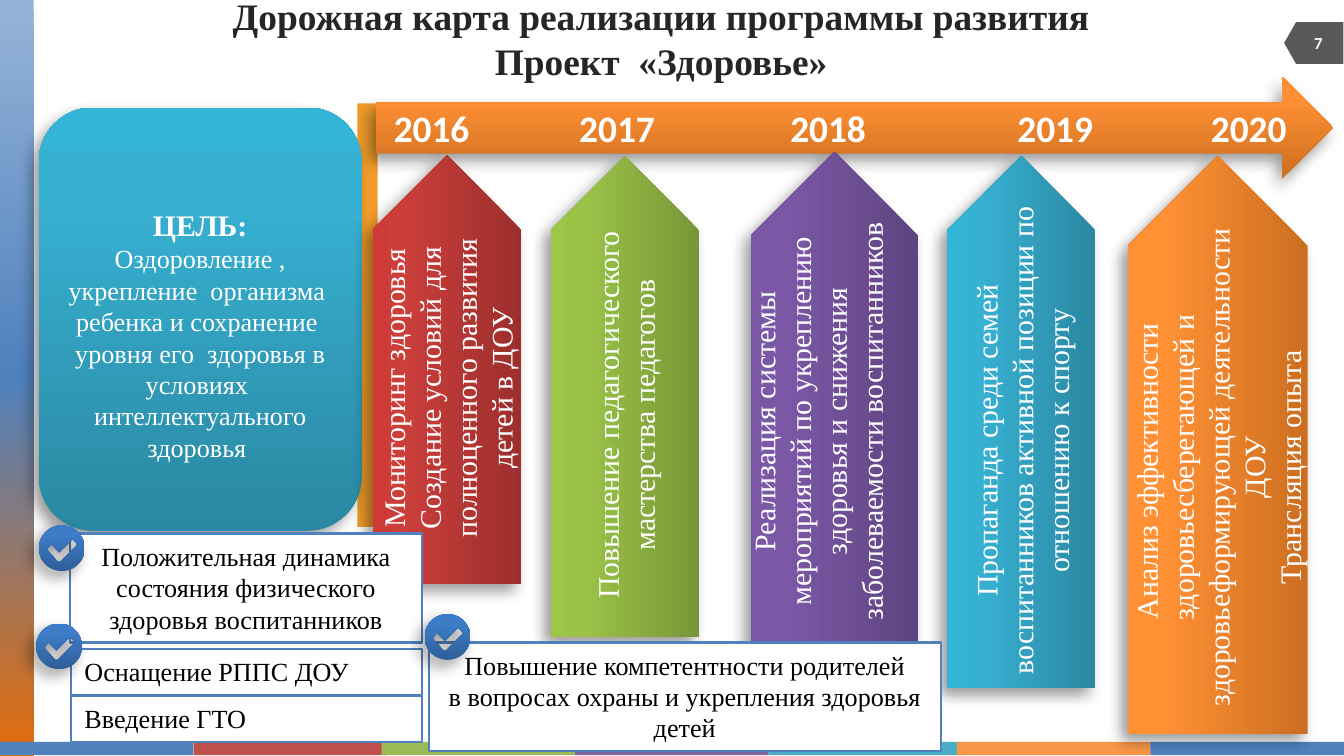
"""Builds the road map slide of the «Здоровье» project."""
import math

from lxml import etree
from pptx import Presentation
from pptx.dml.color import RGBColor
from pptx.enum.shapes import MSO_SHAPE
from pptx.enum.text import MSO_ANCHOR, MSO_AUTO_SIZE, PP_ALIGN
from pptx.oxml.ns import qn
from pptx.util import Inches, Pt

RECTANGLE = MSO_SHAPE.RECTANGLE
ROUNDED = MSO_SHAPE.ROUNDED_RECTANGLE
RIGHT_ARROW = MSO_SHAPE.RIGHT_ARROW
HOME_PLATE = MSO_SHAPE.PENTAGON
PAGE_MARKER = MSO_SHAPE.FLOWCHART_OFFPAGE_CONNECTOR
TOP, MIDDLE = MSO_ANCHOR.TOP, MSO_ANCHOR.MIDDLE
LEFT, CENTER = PP_ALIGN.LEFT, PP_ALIGN.CENTER
GROW, FIXED = MSO_AUTO_SIZE.SHAPE_TO_FIT_TEXT, MSO_AUTO_SIZE.NONE
SERIF, SANS = "Times New Roman", "Calibri"

COLORS = {
    "white": "FFFFFF", "black": "000000", "title": "262626", "marker": "595959",
    "stripe": "F09C2A", "blue": "4F81BD", "red": "C0504D", "green": "9BBB59",
    "purple": "8064A2", "aqua": "4BACC6", "orange": "F79646",
}
GRADIENTS = {
    "side": [(0, "95B3D7"), (50, "4F81BD"), (100, "E46C0A")],
    "orange": [(0, "CC6E20"), (80, "FF9034"), (100, "FF9136")],
    "aqua": [(0, "2A88A2"), (80, "37B1D2"), (100, "34B4D6")],
    "red": [(0, "9C2F2D"), (80, "CB3E3A"), (100, "CE3B37")],
    "green": [(0, "779737"), (80, "9BC348"), (100, "9DC746")],
    "purple": [(0, "5F4480"), (80, "7B58A6"), (100, "7C57A8")],
    "badge": [(0, "2F5F99"), (80, "3D7CC7"), (100, "3A7CCB")],
}


def paint(shape, color=None, gradient=None, angle=90, shadow=True):
    shape.line.fill.background()
    shape.shadow.inherit = False
    if color:
        shape.fill.solid()
        shape.fill.fore_color.rgb = RGBColor.from_string(COLORS[color])
        return
    shape.fill.gradient()
    shape.fill.gradient_angle = angle
    properties = shape.element.spPr
    stops = properties.find(".//" + qn("a:gsLst"))
    for stop in list(stops):
        stops.remove(stop)
    for position, value in GRADIENTS[gradient]:
        stop = etree.SubElement(stops, qn("a:gs"), pos=str(position * 1000))
        etree.SubElement(stop, qn("a:srgbClr"), val=value)
    if shadow:
        effects = properties.find(qn("a:effectLst"))
        outer = etree.SubElement(effects, qn("a:outerShdw"), blurRad=str(Pt(8)),
                                 dist=str(Pt(5)), dir="8100000", rotWithShape="0")
        black = etree.SubElement(outer, qn("a:srgbClr"), val=COLORS["black"])
        etree.SubElement(black, qn("a:alpha"), val="40000")


def write(shape, lines, size, color="white", font=SERIF, bold=False,
          align=CENTER, anchor=MIDDLE):
    frame = shape.text_frame
    frame.word_wrap = True
    frame.vertical_anchor = anchor
    for index, line in enumerate(lines):
        paragraph = frame.add_paragraph() if index else frame.paragraphs[0]
        paragraph.alignment = align
        for part_index, part in enumerate(line.split("\n")):
            if part_index:
                paragraph.add_line_break()
            run = paragraph.add_run()
            run.text = part
            run.font.size = Pt(size)
            run.font.name = font
            run.font.bold = bold
            run.font.color.rgb = RGBColor.from_string(COLORS[color])
    return frame


presentation = Presentation()
presentation.slide_width = Inches(10)
presentation.slide_height = Inches(45 / 8)
slide = presentation.slides.add_slide(presentation.slide_layouts[5])
shapes = slide.shapes

title = shapes.title
title.left, title.top, title.width, title.height = map(Inches, (0.62, 0, 8.6, 0.57))
frame = write(title, ["Дорожная карта реализации программы развития\nПроект  «Здоровье»"],
              20, "title", bold=True)
frame.word_wrap = False
frame.auto_size = FIXED
frame.margin_left = frame.margin_right = frame.margin_top = frame.margin_bottom = 0

side_bar = shapes.add_shape(RECTANGLE, 0, 0, Inches(0.25), presentation.slide_height)
paint(side_bar, gradient="side", angle=270, shadow=False)

footer = [(0, "blue"), (1.44, "red"), (2.84, "green"), (4.28, "purple"),
          (5.72, "aqua"), (7.12, "orange"), (8.56, "blue")]
for left, color in footer:
    band = shapes.add_shape(RECTANGLE, Inches(left), Inches(5.52), Inches(1.44), Inches(0.1))
    paint(band, color)

marker = shapes.add_shape(PAGE_MARKER, Inches(9.62), Inches(0.1), Inches(0.31), Inches(0.44))
marker.rotation = 90
paint(marker, "marker")
stripe = shapes.add_shape(RECTANGLE, Inches(2.66), Inches(0.77), Inches(0.15), Inches(3.15))
paint(stripe, "stripe")
page_number = shapes.add_textbox(Inches(9.6), Inches(0.17), Inches(0.42), Inches(0.3))
write(page_number, ["7"], 9, font=SANS, bold=True)

timeline = shapes.add_shape(RIGHT_ARROW, Inches(2.8), Inches(0.57), Inches(7.12), Inches(0.76))
paint(timeline, gradient="orange")
years = "\t".join(str(year) for year in range(2016, 2021))
frame = write(timeline, [years], 20, font=SANS, bold=True, align=LEFT)
frame.margin_left, frame.margin_right = Inches(0.13), 0
tabs = etree.SubElement(frame.paragraphs[0]._p.get_or_add_pPr(), qn("a:tabLst"))
for position in (1.38, 2.95, 4.64, 6.08):
    etree.SubElement(tabs, qn("a:tab"), pos=str(Inches(position)), algn="l")

goal = shapes.add_shape(ROUNDED, Inches(0.29), Inches(0.8), Inches(2.4), Inches(3.15))
paint(goal, gradient="aqua")
frame = write(goal, ["ЦЕЛЬ:", "Оздоровление , укрепление  организма  ребенка и сохранение  "
                     "уровня его  здоровья в условиях  интеллектуального здоровья "], 14)
frame.margin_top = Inches(0.28)
heading = frame.paragraphs[0].runs[0].font
heading.size, heading.bold = Pt(16), True

stages = [
    (1.73, 2.2, 3.19, 1.1, "red", 0.05,
     ["Мониторинг здоровья", "Создание условий для полноценного развития детей в ДОУ"]),
    (2.86, 2.4, 3.58, 1.1, "green", 0.05, ["Повышение педагогического мастерства педагогов"]),
    (4.36, 2.36, 3.7, 1.24, "purple", 0.31,
     ["Реализация системы мероприятий по укреплению здоровья и снижения "
      "заболеваемости воспитанников"]),
    (5.62, 2.59, 3.96, 1.1, "aqua", 0.05,
     ["Пропаганда среди семей воспитанников активной позиции по отношению к спорту"]),
    (6.91, 2.64, 4.3, 1.34, "orange", 0.05,
     ["Анализ эффективности  здоровьесберегающей и здоровьеформирующей деятельности ДОУ",
      "Трансляция опыта"]),
]
for left, top, width, height, gradient, bottom_margin, lines in stages:
    stage = shapes.add_shape(HOME_PLATE, Inches(left), Inches(top), Inches(width), Inches(height))
    stage.rotation = 270
    paint(stage, gradient=gradient)
    write(stage, lines, 16).margin_bottom = Inches(bottom_margin)

circle = [(0.17 + 0.17 * math.cos(math.radians(angle)), 0.17 + 0.17 * math.sin(math.radians(angle)))
          for angle in range(0, 360, 10)]
check = [(0.28, 0.13), (0.25, 0.1), (0.15, 0.2), (0.09, 0.14),
         (0.06, 0.18), (0.14, 0.27), (0.16, 0.27), (0.28, 0.15)]
results = [
    (0.52, 3.97, 2.62, 0.81, CENTER, (0.29, 3.91),
     ["Положительная динамика состояния физического здоровья воспитанников"]),
    (0.53, 4.83, 2.61, 0.34, LEFT, (0.27, 4.64), ["Оснащение РППС ДОУ"]),
    (3.19, 4.78, 3.81, 0.81, CENTER, (3.16, 4.57),
     ["Повышение компетентности родителей", "в вопросах охраны и укрепления здоровья детей"]),
    (0.53, 5.18, 2.61, 0.34, LEFT, None, ["Введение ГТО"]),
]
for left, top, width, height, align, badge_corner, lines in results:
    box = shapes.add_shape(RECTANGLE, Inches(left), Inches(top), Inches(width), Inches(height))
    paint(box, "white")
    box.line.color.rgb = RGBColor.from_string(COLORS["blue"])
    box.line.width = Pt(1.25)
    write(box, lines, 14, "black", align=align, anchor=TOP).auto_size = GROW
    if badge_corner:
        x, y = badge_corner
        outline, tick = ([(Inches(x + dx), Inches(y + dy)) for dx, dy in points]
                         for points in (circle, check))
        builder = shapes.build_freeform(*outline[0])
        builder.add_line_segments(outline[1:], close=True)
        builder.move_to(*tick[0])
        builder.add_line_segments(tick[1:], close=True)
        paint(builder.convert_to_shape(), gradient="badge")

presentation.save("out.pptx")
